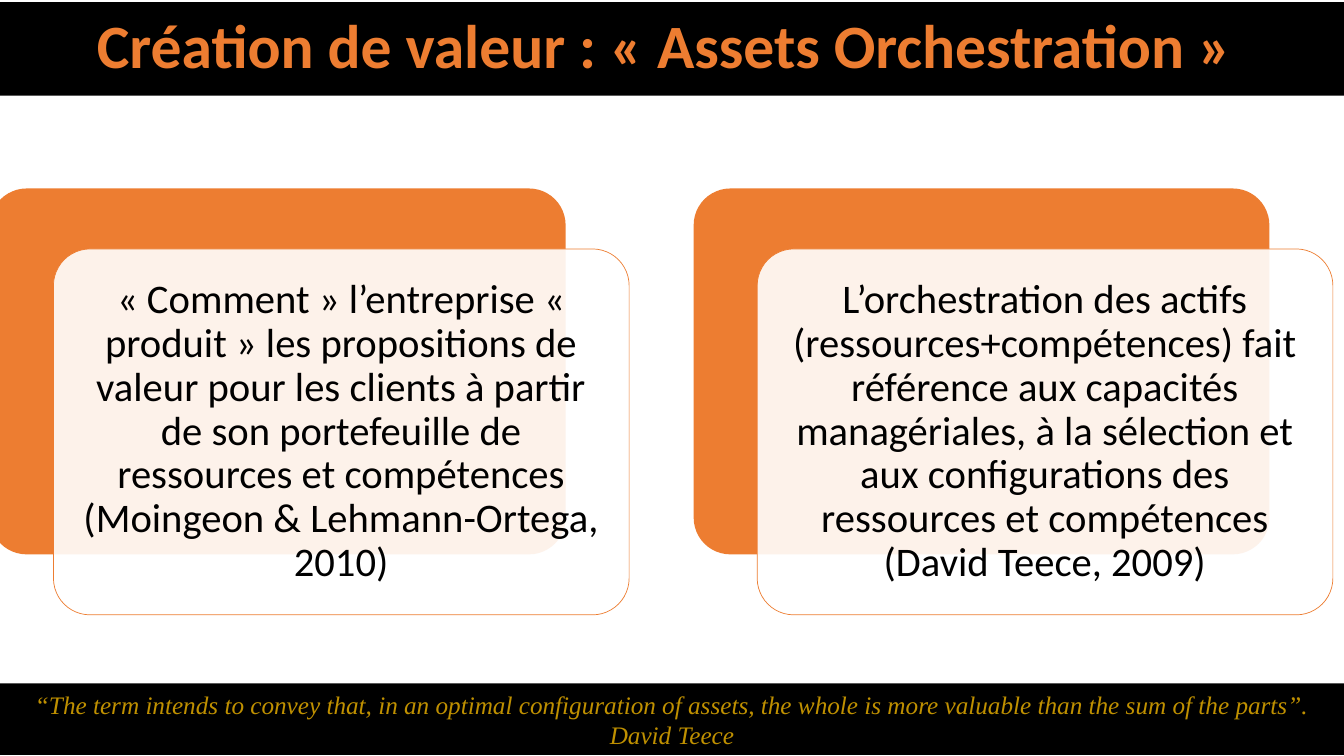
from lxml import etree
from pptx import Presentation
from pptx.dml.color import RGBColor
from pptx.enum.shapes import MSO_SHAPE
from pptx.enum.text import MSO_ANCHOR, MSO_AUTO_SIZE, PP_ALIGN
from pptx.oxml.ns import qn
from pptx.util import Inches, Pt

COLORS = {"black": "000000", "white": "FFFFFF", "orange": "ED7D31", "gold": "BF9000"}

TITLE = "Création de valeur : « Assets Orchestration » "
CARDS = [
    "« Comment » l’entreprise « produit » les propositions de valeur pour les clients "
    "à partir de son portefeuille de ressources et compétences "
    "(Moingeon & Lehmann-Ortega, 2010)",
    "L’orchestration des actifs (ressources+compétences) fait référence aux capacités "
    "managériales, à la sélection et aux configurations des ressources et compétences "
    "(David Teece, 2009)",
]
QUOTE = [
    "“The term intends to convey that, in an optimal configuration of assets, "
    "the whole is more valuable than the sum of the parts”.",
    "David Teece",
]

SLIDE_WIDTH = 13.33
CARD_WIDTH, CARD_HEIGHT = 5.71, 3.63
CARD_LEFT, CARD_TOP = -0.1, 1.87
CARD_STEP = 6.98
FRONT_SHIFT_X, FRONT_SHIFT_Y = 0.63, 0.6


def color(name):
    return RGBColor.from_string(COLORS[name])


def paint(shape, fill):
    shape.fill.solid()
    shape.fill.fore_color.rgb = color(fill)


def add_panel(slide, kind, left, top, width, height, fill):
    """Add a filled shape without outline or shadow."""
    panel = slide.shapes.add_shape(
        kind, Inches(left), Inches(top), Inches(width), Inches(height))
    panel.shadow.inherit = False
    paint(panel, fill)
    panel.line.fill.background()
    return panel


def add_rounded_panel(slide, left, top, fill):
    panel = add_panel(slide, MSO_SHAPE.ROUNDED_RECTANGLE, left, top,
                      CARD_WIDTH, CARD_HEIGHT, fill)
    panel.adjustments[0] = 0.1
    return panel


def write(frame, lines, font_name, size, ink, bold=False, italic=False, spacing=1.0):
    """Fill a text frame with centred paragraphs of one style."""
    frame.word_wrap = True
    frame.auto_size = MSO_AUTO_SIZE.NONE
    frame.vertical_anchor = MSO_ANCHOR.MIDDLE
    for index, line in enumerate(lines):
        para = frame.paragraphs[0] if index == 0 else frame.add_paragraph()
        para.text = line
        para.alignment = PP_ALIGN.CENTER
        para.line_spacing = spacing
        para.font.name = font_name
        para.font.size = Pt(size)
        para.font.bold = bold
        para.font.italic = italic
        para.font.color.rgb = color(ink)


def set_opacity(shape, percent):
    fill_color = shape.fill._xPr.find(qn("a:solidFill"))[0]
    etree.SubElement(fill_color, qn("a:alpha")).set("val", str(percent * 1000))


def add_title(slide):
    title = slide.shapes.title
    title.left, title.top = Inches(0), Inches(0.02)
    title.width, title.height = Inches(SLIDE_WIDTH), Inches(0.93)
    paint(title, "black")
    write(title.text_frame, [TITLE], "Calibri", 44, "orange", bold=True, spacing=0.9)


def add_card(slide, left, text):
    """Add an orange panel with a translucent text panel shifted over it."""
    add_rounded_panel(slide, left, CARD_TOP, "orange")
    front = add_rounded_panel(
        slide, left + FRONT_SHIFT_X, CARD_TOP + FRONT_SHIFT_Y, "white")
    set_opacity(front, 90)
    front.line.color.rgb = color("orange")
    front.line.width = Pt(0.5)
    frame = front.text_frame
    frame.margin_left = frame.margin_right = Inches(0.12)
    frame.margin_top = frame.margin_bottom = Inches(0.12)
    write(frame, [text], "Calibri", 29, "black", spacing=0.9)


def add_quote(slide):
    banner = add_panel(slide, MSO_SHAPE.RECTANGLE, 0, 6.78, SLIDE_WIDTH, 0.71, "black")
    write(banner.text_frame, QUOTE, "Times New Roman", 18, "gold", italic=True)


def main():
    deck = Presentation()
    deck.slide_width, deck.slide_height = Inches(SLIDE_WIDTH), Inches(7.5)
    slide = deck.slides.add_slide(deck.slide_layouts[5])
    add_title(slide)
    for index, text in enumerate(CARDS):
        add_card(slide, CARD_LEFT + index * CARD_STEP, text)
    add_quote(slide)
    deck.save("out.pptx")


if __name__ == "__main__":
    main()
